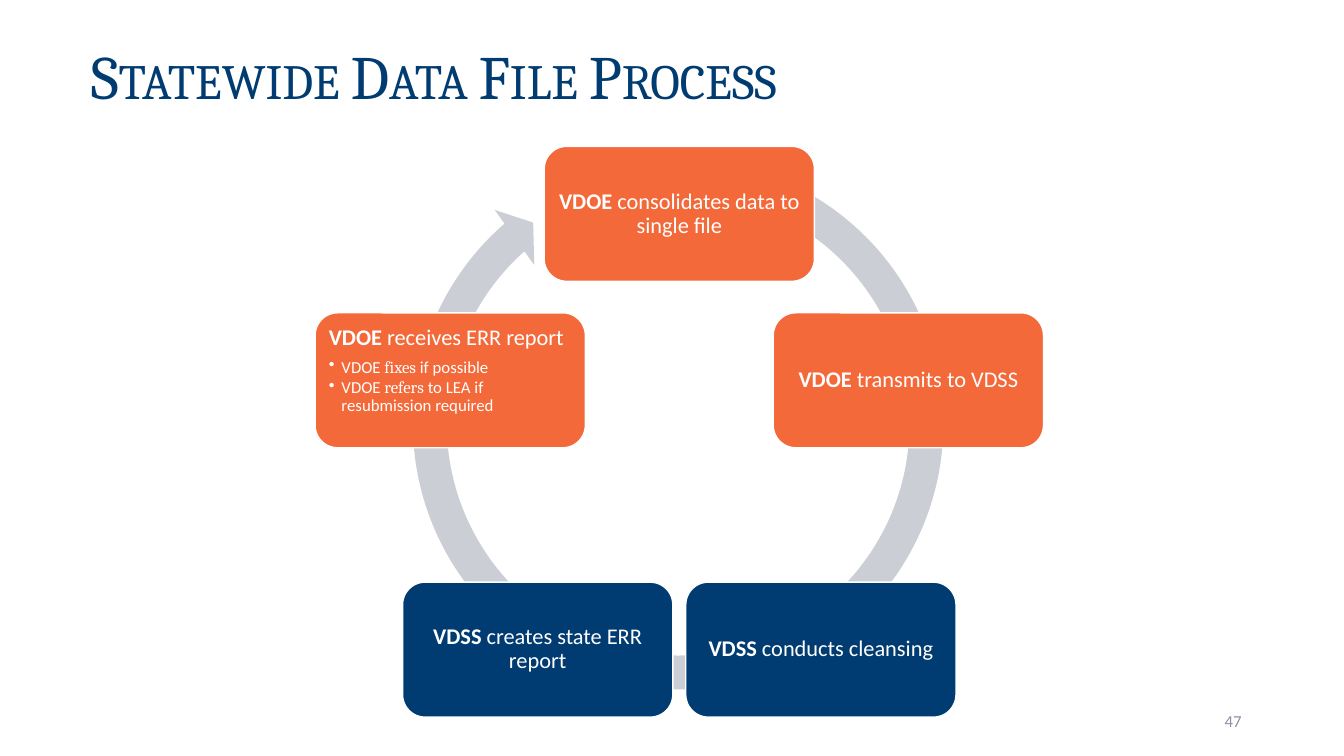
from math import cos, radians, sin

from lxml import etree
from pptx import Presentation
from pptx.dml.color import RGBColor
from pptx.enum import shapes, text
from pptx.oxml import ns
from pptx.util import Cm, Pt

# Content: colour, heading runs (agency, action), bullets as (words, font) runs
TITLE = "Statewide Data File Process"
PAGE_NUMBER = "47"
NAVY, ORANGE, GREY, WHITE, MUTED = "003C71", "F36939", "CCCED5", "FFFFFF", "8C92A5"
STEPS = [
    (ORANGE, "VDOE", " consolidates data to single file", []),
    (ORANGE, "VDOE", " transmits to VDSS", []),
    (NAVY, "VDSS", " conducts cleansing", []),
    (NAVY, "VDSS", " creates state ERR report", []),
    (ORANGE, "VDOE", " receives ERR report", [
        [("VDOE ", "Calibri"), ("fixes", "Cambria"), (" if possible", "Calibri")],
        [("VDOE ", "Calibri"), ("refers", "Cambria"),
         (" to LEA if resubmission required", "Calibri")],
    ]),
]

# Geometry in centimetres
CENTRE_X, CENTRE_Y, RADIUS = 17.12, 11.46, 6.07
STEP_WIDTH, STEP_HEIGHT = 6.81, 3.4
ARROW_BOX = (9.98, 3.58, 14.22, 14.22)
ARROW_ADJUSTMENTS = (0.06, 3.31, 137.26, 174.16, 0.06)
STEP_MARGIN = 0.18
BULLET_INDENT = 0.32


def colour(value):
    return RGBColor.from_string(value)


def set_attributes(target, values):
    for name, value in values.items():
        setattr(target, name, value)


def add_run(paragraph, words, size, font="Calibri", fill=WHITE, bold=False):
    run = paragraph.add_run()
    run.text = words
    set_attributes(run.font, {"name": font, "size": Pt(size), "bold": bold})
    run.font.color.rgb = colour(fill)
    return run


def set_frame(frame, margins, anchor):
    sides = ("margin_left", "margin_top", "margin_right", "margin_bottom")
    set_attributes(frame, {side: Cm(margin) for side, margin in zip(sides, margins)})
    set_attributes(frame, {"word_wrap": True, "vertical_anchor": anchor})
    return frame.paragraphs[0]


def add_shape(slide, kind, box, fill):
    shape = slide.shapes.add_shape(kind, *map(Cm, box))
    shape.shadow.inherit = False
    shape.fill.solid()
    shape.fill.fore_color.rgb = colour(fill)
    return shape


def add_bullet(paragraph, runs):
    properties = paragraph._p.get_or_add_pPr()
    properties.set("marL", str(Cm(BULLET_INDENT)))
    properties.set("indent", str(-Cm(BULLET_INDENT)))
    set_attributes(paragraph, {"line_spacing": 0.9, "space_after": Pt(1.8)})
    etree.SubElement(properties, ns.qn("a:buChar")).set("char", "•")
    for words, font in runs:
        add_run(paragraph, words, 12, font)


def add_step(slide, index, fill, agency, action, bullets):
    # Steps sit evenly on a circle, clockwise from the top
    angle = radians(index * 360 / len(STEPS))
    left = CENTRE_X + RADIUS * sin(angle) - STEP_WIDTH / 2
    top = CENTRE_Y - RADIUS * cos(angle) - STEP_HEIGHT / 2
    step = add_shape(slide, shapes.MSO_SHAPE.ROUNDED_RECTANGLE,
                     (left, top, STEP_WIDTH, STEP_HEIGHT), fill)
    step.line.color.rgb = colour(WHITE)
    step.line.width = Pt(1)

    anchor = text.MSO_ANCHOR.TOP if bullets else text.MSO_ANCHOR.MIDDLE
    heading = set_frame(step.text_frame, [STEP_MARGIN] * 4, anchor)
    set_attributes(heading, {
        "alignment": text.PP_ALIGN.LEFT if bullets else text.PP_ALIGN.CENTER,
        "line_spacing": 0.9,
        "space_after": Pt(5.6 if bullets else 0),
    })
    add_run(heading, agency, 16, bold=True)
    add_run(heading, action, 16)
    for runs in bullets:
        paragraph = step.text_frame.add_paragraph()
        paragraph.alignment = text.PP_ALIGN.LEFT
        add_bullet(paragraph, runs)


def main():
    presentation = Presentation()
    presentation.slide_width, presentation.slide_height = Cm(33.87), Cm(19.05)
    slide = presentation.slides.add_slide(presentation.slide_layouts[6])

    # Title
    box = slide.shapes.add_textbox(Cm(0), Cm(-0.5), Cm(33.87), Cm(4.2))
    title = set_frame(box.text_frame, (2.29, 1.78, 0.25, 0.13), text.MSO_ANCHOR.TOP)
    title.line_spacing = 0.9
    run = add_run(title, TITLE, 44, "Cambria", NAVY)
    run._r.get_or_add_rPr().set("cap", "small")

    # Cycle arrow behind the steps
    arrow = add_shape(slide, shapes.MSO_SHAPE.CIRCULAR_ARROW, ARROW_BOX, GREY)
    arrow.line.fill.background()
    for index, value in enumerate(ARROW_ADJUSTMENTS):
        arrow.adjustments[index] = value

    # Steps
    for index, step in enumerate(STEPS):
        add_step(slide, index, *step)

    # Page number
    box = slide.shapes.add_textbox(Cm(23.92), Cm(17.66), Cm(7.62), Cm(1.01))
    number = set_frame(box.text_frame, (0.25, 0.13, 0.25, 0.13), text.MSO_ANCHOR.MIDDLE)
    number.alignment = text.PP_ALIGN.RIGHT
    add_run(number, PAGE_NUMBER, 12, fill=MUTED)

    presentation.save("out.pptx")


if __name__ == "__main__":
    main()
